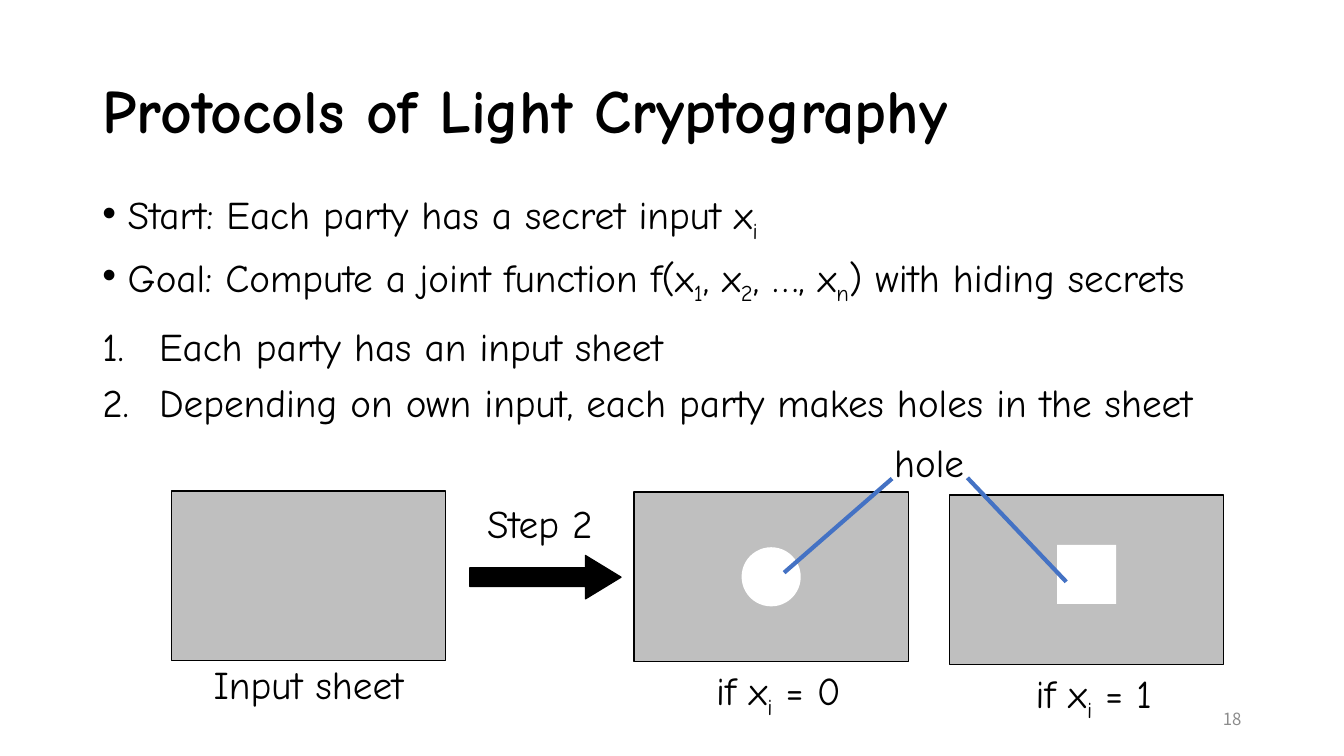
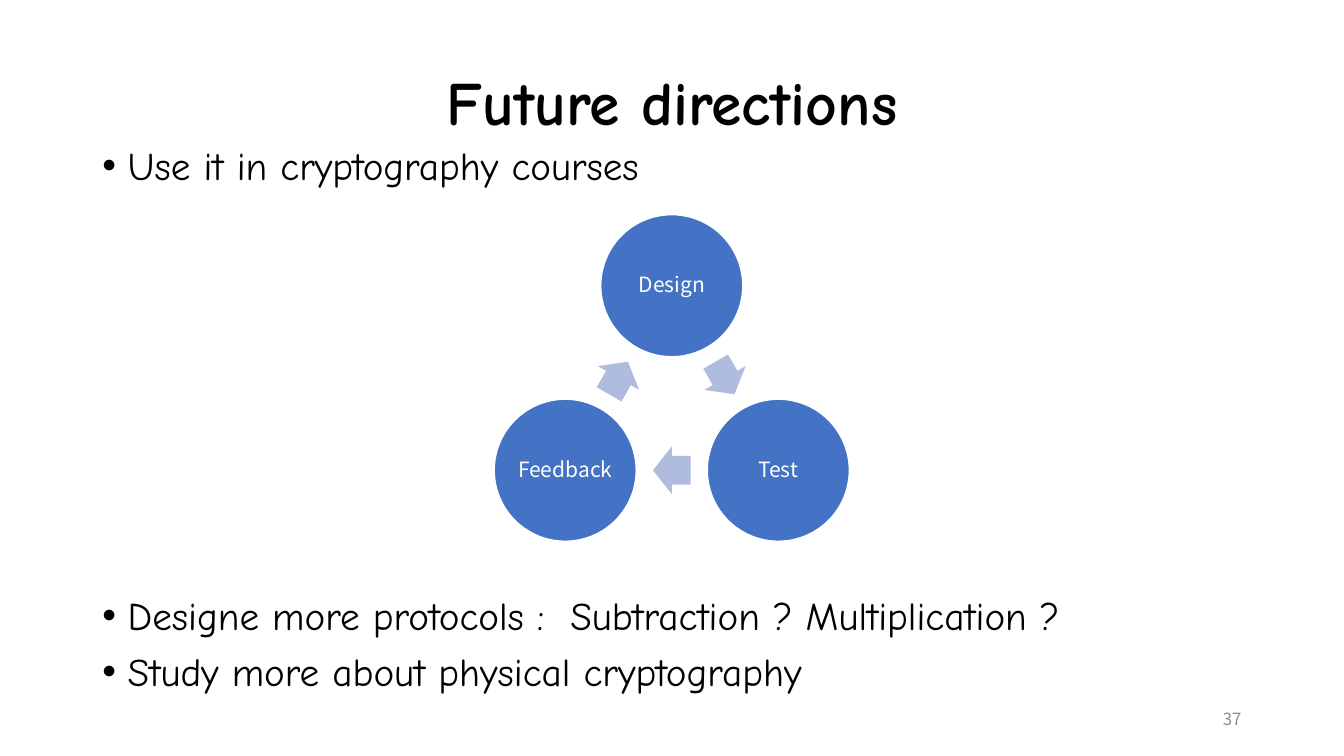
"""Builds two slides on light cryptography protocols and their future directions."""
from math import cos, radians, sin

from lxml.etree import SubElement
from pptx import Presentation
from pptx.dml.color import RGBColor
from pptx.enum.shapes import MSO_CONNECTOR, MSO_SHAPE
from pptx.enum.text import MSO_ANCHOR, MSO_AUTO_SIZE, PP_ALIGN
from pptx.oxml.ns import qn
from pptx.util import Cm, Pt

BLACK = RGBColor(0x00, 0x00, 0x00)
WHITE = RGBColor(0xFF, 0xFF, 0xFF)
GRAY = RGBColor(0x8C, 0x8C, 0x8C)
SHEET_GRAY = RGBColor(0xBF, 0xBF, 0xBF)
BLUE = RGBColor(0x44, 0x72, 0xC4)
PALE_BLUE = RGBColor(0xB0, 0xBC, 0xDE)
HAND_FONT = "Comic Neue"
PLAIN_FONT = "Noto Sans CJK JP"
LEFT = 2.33
DOT = ("buChar", {"char": "•"}, 0.64)
NUMBER = ("buAutoNum", {"type": "arabicPeriod"}, 1.43)


def write(shape, paragraphs, size=28, font=HAND_FONT, color=BLACK, align=PP_ALIGN.LEFT,
          anchor=MSO_ANCHOR.TOP, bold=False, bullet=None):
    """Fill a shape with paragraphs; every second run of a paragraph is a subscript."""
    frame = shape.text_frame
    frame.word_wrap = True
    frame.auto_size = MSO_AUTO_SIZE.NONE
    frame.vertical_anchor = anchor
    for index, runs in enumerate(paragraphs):
        paragraph = frame.add_paragraph() if index else frame.paragraphs[0]
        if bullet:
            tag, attributes, indent = bullet
            properties = paragraph._p.get_or_add_pPr()
            properties.set("marL", str(Cm(indent)))
            properties.set("indent", str(-Cm(indent)))
            SubElement(properties, qn("a:buFont"), typeface="Arial" if bullet is DOT else font)
            SubElement(properties, qn(f"a:{tag}"), attributes)
        paragraph.alignment = align
        paragraph.line_spacing = 0.9
        paragraph.space_before = Pt(10 if index else 0)
        for position, text in enumerate(runs):
            run = paragraph.add_run()
            run.text = text
            run.font.size = Pt(size)
            run.font.name = font
            run.font.bold = bold
            run.font.color.rgb = color
            if position % 2:
                run._r.get_or_add_rPr().set("baseline", "-25000")


def add_figure(slide, preset, left, top, width, height, fill, line=None):
    """Add a flat preset shape with an optional thin outline."""
    figure = slide.shapes.add_shape(preset, Cm(left), Cm(top), Cm(width), Cm(height))
    figure.shadow.inherit = False
    figure.fill.solid()
    figure.fill.fore_color.rgb = fill
    if line is None:
        figure.line.fill.background()
    else:
        figure.line.color.rgb = line
        figure.line.width = Pt(1)
    return figure


prs = Presentation()
prs.slide_width, prs.slide_height = Cm(33.87), Cm(19.05)

slides = []
for heading, top, height, align, number in (
    ("Protocols of Light Cryptography", 1.01, 3.68, PP_ALIGN.LEFT, "18"),
    ("Future directions", 1.37, 2.57, PP_ALIGN.CENTER, "37"),
):
    slide = prs.slides.add_slide(prs.slide_layouts[5])
    title = slide.shapes.title
    title.left, title.top, title.width, title.height = Cm(LEFT), Cm(top), Cm(29.21), Cm(height)
    write(title, [[heading]], size=44, align=align, anchor=MSO_ANCHOR.MIDDLE, bold=True)
    page_number = slide.shapes.add_textbox(Cm(23.92), Cm(17.65), Cm(7.62), Cm(1.01))
    write(page_number, [[number]], size=12, font=PLAIN_FONT, color=GRAY,
          align=PP_ALIGN.RIGHT, anchor=MSO_ANCHOR.MIDDLE)
    slides.append(slide)
protocols, future = slides

for slide, top, bullet, paragraphs in (
    (protocols, 4.7, DOT, [
        ["Start: Each party has a secret input x", "i"],
        ["Goal: Compute a joint function f(x", "1", ", x", "2", ", …, x", "n",
         ") with hiding secrets"],
    ]),
    (protocols, 8.13, NUMBER, [
        ["Each party has an input sheet"],
        ["Depending on own input, each party makes holes in the sheet"],
    ]),
    (future, 3.56, DOT, [["Use it in cryptography courses"]]),
    (future, 14.9, DOT, [
        ["Designe more protocols :  Subtraction ? Multiplication ?"],
        ["Study more about physical cryptography"],
    ]),
):
    points = slide.shapes.add_textbox(Cm(LEFT), Cm(top), Cm(30.4), Cm(1.4 * len(paragraphs)))
    write(points, paragraphs, bullet=bullet)

SHEET_WIDTH, SHEET_HEIGHT, HOLE = 6.91, 4.27, 1.49
for left, top, hole_preset, hole_shift, caption_shift, caption in (
    (4.32, 12.37, None, 0, 0, ["Input sheet"]),
    (15.98, 12.4, MSO_SHAPE.OVAL, 0, 0.18, ["if x", "i", " = 0"]),
    (23.93, 12.47, MSO_SHAPE.RECTANGLE, -0.13, 0.18, ["if x", "i", " = 1"]),
):
    add_figure(protocols, MSO_SHAPE.RECTANGLE, left, top, SHEET_WIDTH, SHEET_HEIGHT,
               SHEET_GRAY, BLACK)
    if hole_preset is not None:
        add_figure(protocols, hole_preset, left + (SHEET_WIDTH - HOLE) / 2,
                   top + (SHEET_HEIGHT - HOLE) / 2 + hole_shift, HOLE, HOLE, WHITE)
    label = protocols.shapes.add_textbox(Cm(left + caption_shift), Cm(top + SHEET_HEIGHT + 0.02),
                                         Cm(SHEET_WIDTH), Cm(1.5))
    write(label, [caption], align=PP_ALIGN.CENTER)

step_arrow = add_figure(protocols, MSO_SHAPE.RIGHT_ARROW, 11.84, 14, 3.81, 1.09, BLACK, BLACK)
step_arrow.adjustments[0], step_arrow.adjustments[1] = 0.429, 0.821
for text, left, top, width in (("Step 2", 11.33, 12.6, 4.55), ("hole", 21.84, 11.05, 3.15)):
    label = protocols.shapes.add_textbox(Cm(left), Cm(top), Cm(width), Cm(1.5))
    write(label, [[text]], align=PP_ALIGN.CENTER)

for start_x, start_y, end_x, end_y in ((22.48, 12.06, 19.76, 14.43), (24.38, 12.04, 26.87, 14.66)):
    pointer = protocols.shapes.add_connector(MSO_CONNECTOR.STRAIGHT, Cm(start_x), Cm(start_y),
                                             Cm(end_x), Cm(end_y))
    pointer.line.color.rgb = BLUE
    pointer.line.width = Pt(3)
    SubElement(pointer._element.spPr, qn("a:effectLst"))

CYCLE_X, CYCLE_Y, CYCLE_RADIUS = 16.93, 10.3, 3.1
STAGE, ARROW_LENGTH, ARROW_WIDTH = 3.58, 0.95, 1.2
for index, name in enumerate(("Design", "Test", "Feedback")):
    angle = radians(120 * index - 90)
    stage = add_figure(future, MSO_SHAPE.OVAL, CYCLE_X + CYCLE_RADIUS * cos(angle) - STAGE / 2,
                       CYCLE_Y + CYCLE_RADIUS * sin(angle) - STAGE / 2, STAGE, STAGE, BLUE, WHITE)
    frame = stage.text_frame
    frame.margin_left = frame.margin_right = frame.margin_top = frame.margin_bottom = Cm(0.05)
    write(stage, [[name]], size=15, font=PLAIN_FONT, color=WHITE, align=PP_ALIGN.CENTER,
          anchor=MSO_ANCHOR.MIDDLE)
    angle += radians(60)
    cycle_arrow = add_figure(future, MSO_SHAPE.RIGHT_ARROW,
                             CYCLE_X + CYCLE_RADIUS / 2 * cos(angle) - ARROW_LENGTH / 2,
                             CYCLE_Y + CYCLE_RADIUS / 2 * sin(angle) - ARROW_WIDTH / 2,
                             ARROW_LENGTH, ARROW_WIDTH, PALE_BLUE)
    cycle_arrow.adjustments[0], cycle_arrow.adjustments[1] = 0.6, 0.5
    cycle_arrow.rotation = 120 * index + 60

prs.save("out.pptx")
